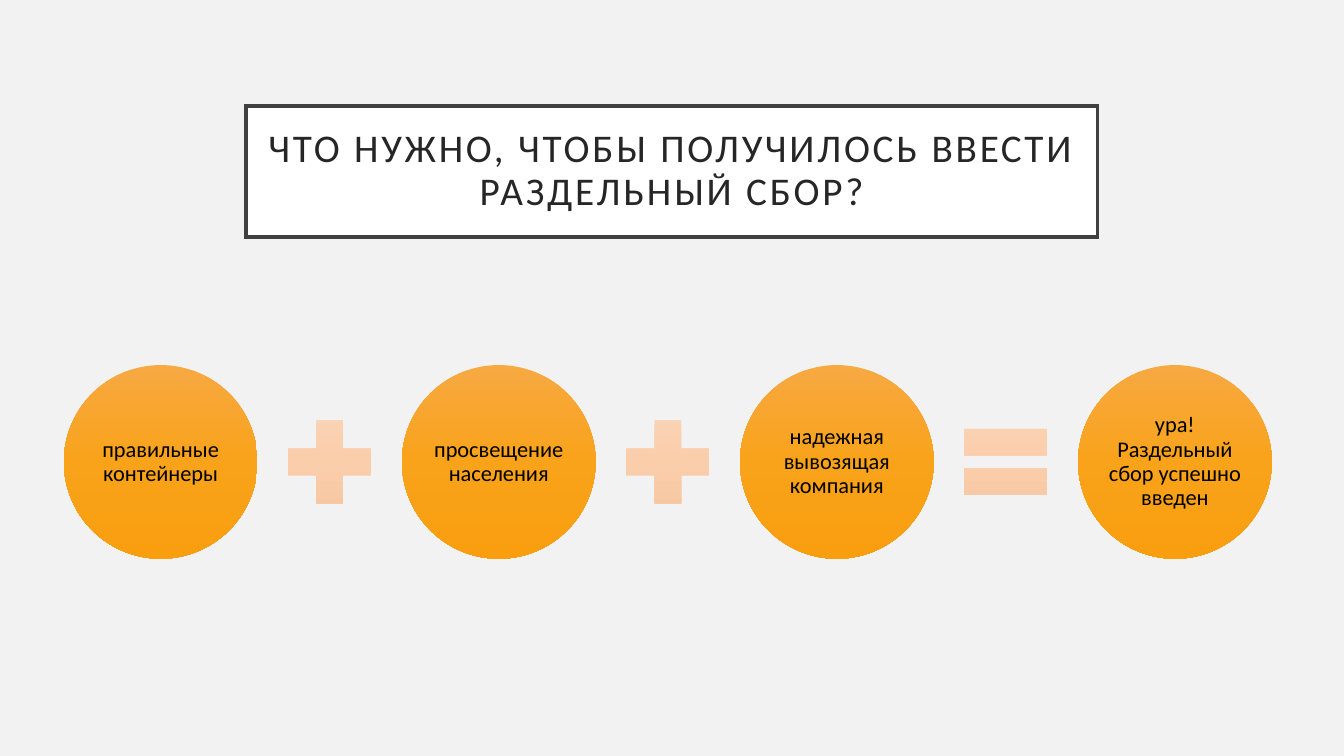
from copy import deepcopy

from lxml import etree
from pptx import Presentation
from pptx.dml.color import RGBColor
from pptx.enum.shapes import MSO_SHAPE
from pptx.enum.text import MSO_ANCHOR, MSO_AUTO_SIZE, PP_ALIGN
from pptx.oxml.ns import qn
from pptx.util import Cm, Pt

TITLE = "ЧТО НУЖНО, ЧТОБЫ ПОЛУЧИЛОСЬ ВВЕСТИ РАЗДЕЛЬНЫЙ СБОР?"
TERMS = [
    "правильные контейнеры",
    "просвещение населения",
    "надежная вывозящая компания",
    "ура! Раздельный сбор успешно введен",
]
CIRCLE = MSO_SHAPE.OVAL
PLUS = MSO_SHAPE.MATH_PLUS
EQUAL = MSO_SHAPE.MATH_EQUAL
RECTANGLE_MIDDLE = MSO_ANCHOR.MIDDLE
CENTER = PP_ALIGN.CENTER
NO_AUTOFIT = MSO_AUTO_SIZE.NONE
SIGNS = [PLUS, PLUS, EQUAL]

FONT = "Calibri"
CIRCLE_COLORS = ["F7A942", "F9A31A", "F99E0F"]
SIGN_COLORS = ["FAD4B7", "FBCEAB", "F5C59F"]

ROW_LEFT, ROW_TOP = 1.61, 9.2
CIRCLE_SIZE, SIGN_SIZE, STEP = 4.88, 2.84, 8.52


def color(value):
    return RGBColor.from_string(value)


def write(shape, text, size, text_color, inset):
    frame = shape.text_frame
    frame.text = text
    frame.word_wrap = True
    frame.auto_size = NO_AUTOFIT
    frame.vertical_anchor = RECTANGLE_MIDDLE
    frame.margin_left = frame.margin_right = Cm(inset)
    frame.margin_top = frame.margin_bottom = Cm(inset)
    para = frame.paragraphs[0]
    para.alignment = CENTER
    para.line_spacing = 0.9
    span = para.runs[0]
    span.font.name = FONT
    span.font.size = Pt(size)
    span.font.color.rgb = color(text_color)
    return span


def add_gradient_shape(page, kind, left, top, size, colors):
    shape = page.shapes.add_shape(kind, Cm(left), Cm(top), Cm(size), Cm(size))
    shape.shadow.inherit = False
    shape.line.fill.background()
    shape.fill.gradient()
    shape.fill.gradient_angle = 270
    stop_list = next(shape._element.spPr.iter(qn("a:gsLst")))
    stop_list.insert(1, deepcopy(stop_list[0]))
    for index, stop in enumerate(shape.fill.gradient_stops):
        stop.position = index / (len(colors) - 1)
        stop.color.rgb = color(colors[index])
    return shape


def add_title(page):
    title = page.shapes.title
    title.left, title.top = Cm(6.2), Cm(2.67)
    title.width, title.height = Cm(21.46), Cm(3.3)
    title.fill.solid()
    title.fill.fore_color.rgb = color("FFFFFF")
    title.line.color.rgb = color("404040")
    title.line.width = Pt(2.5)
    outline = title._element.spPr.find(qn("a:ln"))
    etree.SubElement(outline, qn("a:miter")).set("lim", "800000")
    span = write(title, TITLE, 28, "262626", 0.51)
    span.font._element.set("spc", "200")


def add_equation(page):
    sign_left = ROW_LEFT + (CIRCLE_SIZE + STEP - SIGN_SIZE) / 2
    sign_top = ROW_TOP + (CIRCLE_SIZE - SIGN_SIZE) / 2
    for index, term in enumerate(TERMS):
        offset = index * STEP
        circle = add_gradient_shape(
            page, CIRCLE, ROW_LEFT + offset, ROW_TOP, CIRCLE_SIZE, CIRCLE_COLORS
        )
        write(circle, term, 16, "000000", 0.05)
        if index < len(SIGNS):
            add_gradient_shape(
                page, SIGNS[index], sign_left + offset, sign_top, SIGN_SIZE, SIGN_COLORS
            )


def main():
    deck = Presentation()
    deck.slide_width, deck.slide_height = Cm(33.87), Cm(19.05)
    page = deck.slides.add_slide(deck.slide_layouts[5])
    page.background.fill.solid()
    page.background.fill.fore_color.rgb = color("F2F2F2")
    add_title(page)
    add_equation(page)
    deck.save("out.pptx")


if __name__ == "__main__":
    main()
